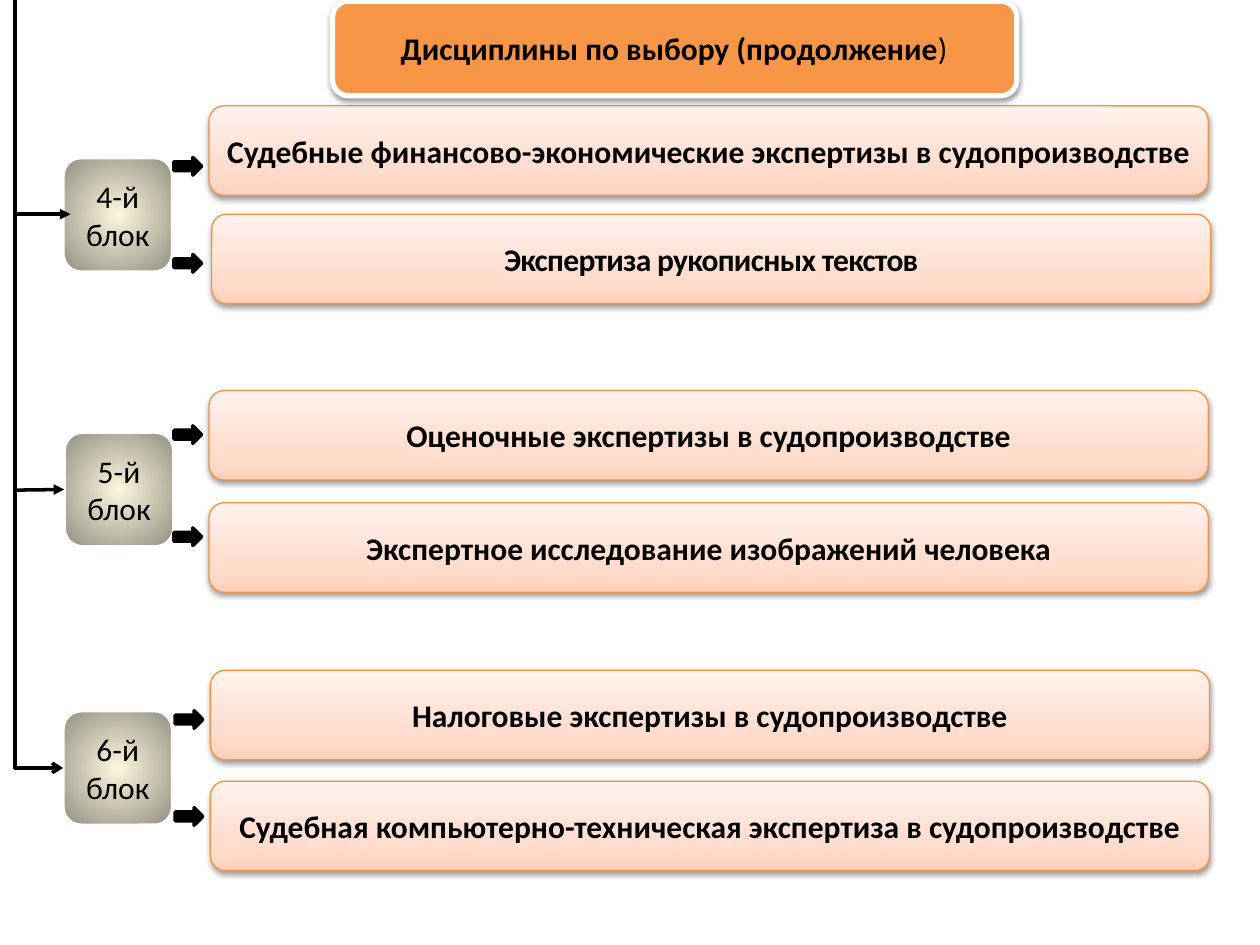
from dataclasses import dataclass

from lxml import etree
from pptx import Presentation
from pptx import util as u
from pptx.dml.color import RGBColor
from pptx.enum import shapes, text
from pptx.oxml.ns import qn

Inches = u.Inches
Kind = shapes.MSO_SHAPE


@dataclass(frozen=True)
class Theme:
    font: str = "Calibri"
    size: int = 18
    ink: str = "000000"
    white: str = "FFFFFF"
    head: str = "F79646"
    edge: str = "F69240"
    peach: tuple = ((0, "FFD2BD"), (35, "FFDED0"), (100, "FFF2ED"))
    stone: tuple = ((0, "FCF7DD"), (100, "918E81"))


@dataclass(frozen=True)
class Course:
    name: str
    left: float
    top: float
    track: float = 0


@dataclass(frozen=True)
class Block:
    name: str
    left: float
    top: float
    arrow: float
    marks: tuple
    courses: tuple


T = Theme()
BLOCKS = (
    Block("4-й блок", 0.5, 1.25, 1.38, (1.25, 2.02), (
        Course("Судебные финансово-экономические экспертизы в судопроизводстве", 1.66, 0.84),
        Course("Экспертиза рукописных текстов", 1.68, 1.7, -0.4))),
    Block("5-й блок", 0.51, 3.43, 1.38, (3.38, 4.19), (
        Course("Оценочные экспертизы в судопроизводстве", 1.66, 3.1),
        Course("Экспертное исследование изображений человека", 1.66, 3.99))),
    Block("6-й блок", 0.5, 5.64, 1.39, (5.64, 6.41), (
        Course("Налоговые экспертизы в судопроизводстве", 1.67, 5.32),
        Course("Судебная компьютерно-техническая экспертиза в судопроизводстве", 1.67, 6.2))),
)


def rgb(code: str) -> RGBColor:
    return RGBColor.from_string(code)


def node(parent, tag: str, **attrs):
    return etree.SubElement(parent, qn(tag), {k: str(v) for k, v in attrs.items()})


def write(shape, words: str, *, bold: bool = False, track: float = 0, fresh: bool = True):
    frame = shape.text_frame
    frame.word_wrap = True
    frame.vertical_anchor = text.MSO_ANCHOR.MIDDLE
    par = frame.paragraphs[0]
    if fresh:
        par.clear()
    par.alignment = text.PP_ALIGN.CENTER
    run = par.add_run()
    run.text = words
    font = run.font
    font.name, font.size, font.bold = T.font, u.Pt(T.size), bold
    font.color.rgb = rgb(T.ink)
    if track:
        font._element.set("spc", str(round(track * 100)))


def shade(shape, stops: tuple, radial: bool = False):
    shape.fill.gradient()
    grad = shape.element.spPr.find(qn("a:gradFill"))
    for child in list(grad):
        grad.remove(child)
    items = node(grad, "a:gsLst")
    for pos, code in stops:
        node(node(items, "a:gs", pos=pos * 1000), "a:srgbClr", val=code)
    if radial:
        node(node(grad, "a:path", path="circle"), "a:fillToRect",
             l=50000, t=50000, r=50000, b=50000)
    else:
        node(grad, "a:lin", ang=16200000, scaled=1)


def draw(slide, kind, box: tuple, line: str, weight: float, *,
         fill: str = "", stops: tuple = (), radial: bool = False, cast: bool = False):
    shape = slide.shapes.add_shape(kind, *map(Inches, box))
    shape.shadow.inherit = False
    if stops:
        shade(shape, stops, radial)
    else:
        shape.fill.solid()
        shape.fill.fore_color.rgb = rgb(fill)
    shape.line.color.rgb = rgb(line)
    shape.line.width = u.Pt(weight)
    if cast:
        outer = node(shape.element.spPr.find(qn("a:effectLst")), "a:outerShdw",
                     blurRad=u.Pt(3.1), dist=u.Pt(1.6), dir=5400000, rotWithShape=0)
        node(node(outer, "a:srgbClr", val=T.ink), "a:alpha", val=38000)
    return shape


def link(slide, kind, start: tuple, end: tuple, head: str, goal=None):
    line = slide.shapes.add_connector(kind, *map(Inches, start + end))
    if goal is not None:
        line.end_connect(goal, 1)
    line.line.color.rgb = rgb(T.ink)
    line.line.width = u.Pt(2)
    node(line.line._get_or_add_ln(), "a:tailEnd", type=head)
    node(line.element.spPr, "a:effectLst")
    return line


def trunk(slide, x: float, goal):
    run, rise = goal.left - Inches(x), goal.top + goal.height // 2
    line = link(slide, shapes.MSO_CONNECTOR.ELBOW, (1, 0), (0, 1), "arrow", goal)
    line.left = Inches(x) + (run - rise) // 2
    line.top = (rise - run) // 2
    line.width, line.height = rise, run
    prop = line.element.spPr
    frame = prop.find(qn("a:xfrm"))
    frame.attrib.pop("flipV", None)
    frame.set("flipH", "1")
    frame.set("rot", "16200000")
    prop.find(qn("a:prstGeom")).set("prst", "bentConnector2")


def build(slide, block: Block):
    for item in block.courses:
        bar = draw(slide, Kind.ROUNDED_RECTANGLE, (item.left, item.top, 7.93, 0.71),
                   T.edge, 0.75, stops=T.peach, cast=True)
        write(bar, item.name, bold=True, track=item.track)
    tile = draw(slide, Kind.ROUNDED_RECTANGLE, (block.left, block.top, 0.87, 0.91),
                T.white, 2, stops=T.stone, radial=True)
    write(tile, block.name)
    for top in block.marks:
        draw(slide, Kind.RIGHT_ARROW, (block.arrow, top, 0.22, 0.14), T.ink, 2, fill=T.ink)
    return tile


def main():
    deck = Presentation()
    deck.slide_width, deck.slide_height = Inches(10), Inches(7.5)
    slide = deck.slides.add_slide(deck.slide_layouts[5])
    four, five, six = [build(slide, block) for block in BLOCKS]
    straight = shapes.MSO_CONNECTOR.STRAIGHT
    link(slide, straight, (0.1, 1.7), (0.56, 1.7), "triangle")
    link(slide, straight, (0.13, 3.89), (0.51, 3.89), "triangle", five)
    trunk(slide, 0.12, six)

    draw(slide, Kind.ROUNDED_RECTANGLE, (2.64, 0.01, 5.43, 0.75), T.white, 3,
         fill=T.head, cast=True)
    title = slide.shapes.title
    title.left, title.top, title.width, title.height = map(Inches, (2.83, 0.18, 5.04, 0.4))
    write(title, "Дисциплины по выбору (продолжение", bold=True)
    write(title, ")", fresh=False)
    title.text_frame.auto_size = text.MSO_AUTO_SIZE.SHAPE_TO_FIT_TEXT
    slide.shapes._spTree.append(title.element)
    deck.save("out.pptx")


if __name__ == "__main__":
    main()
